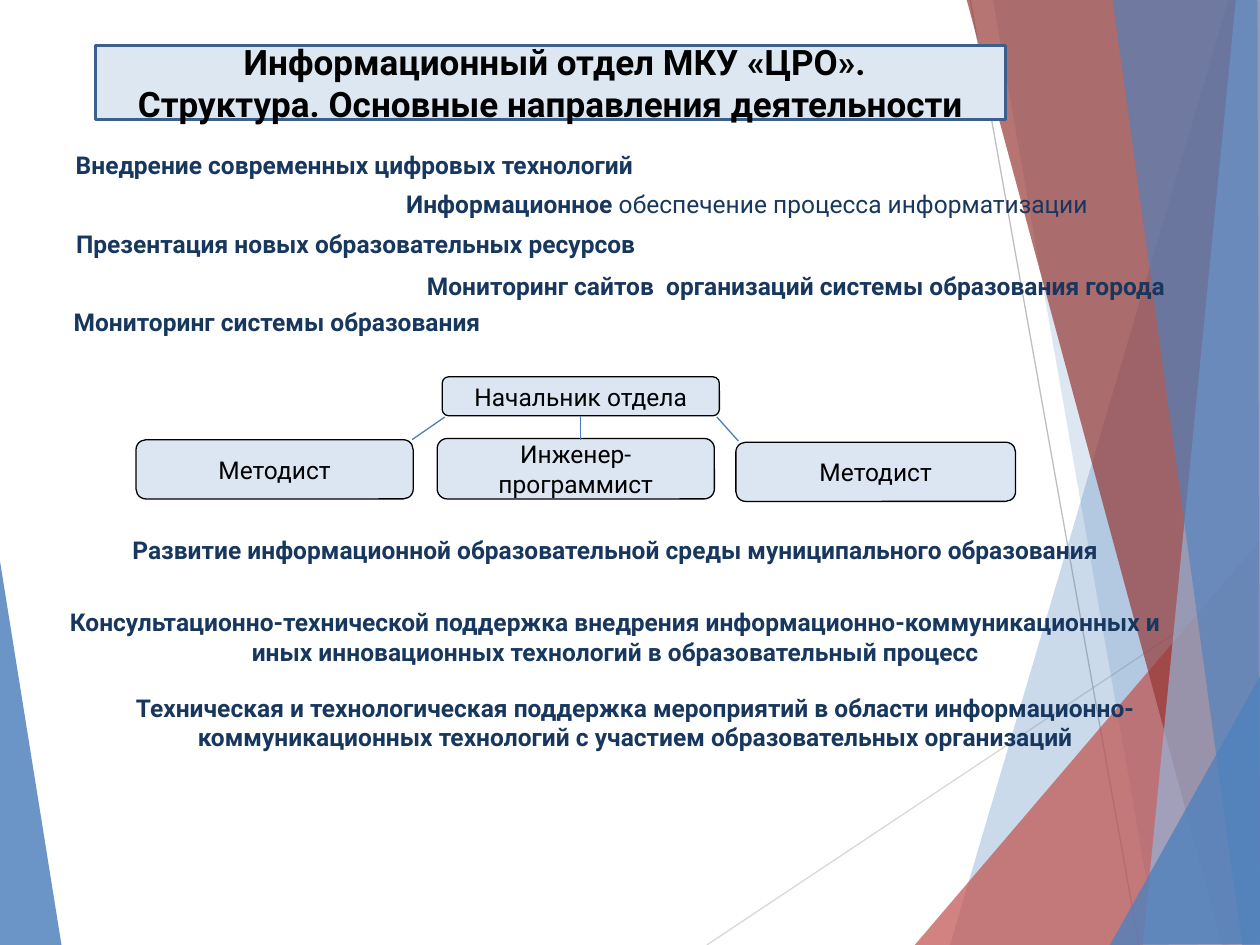
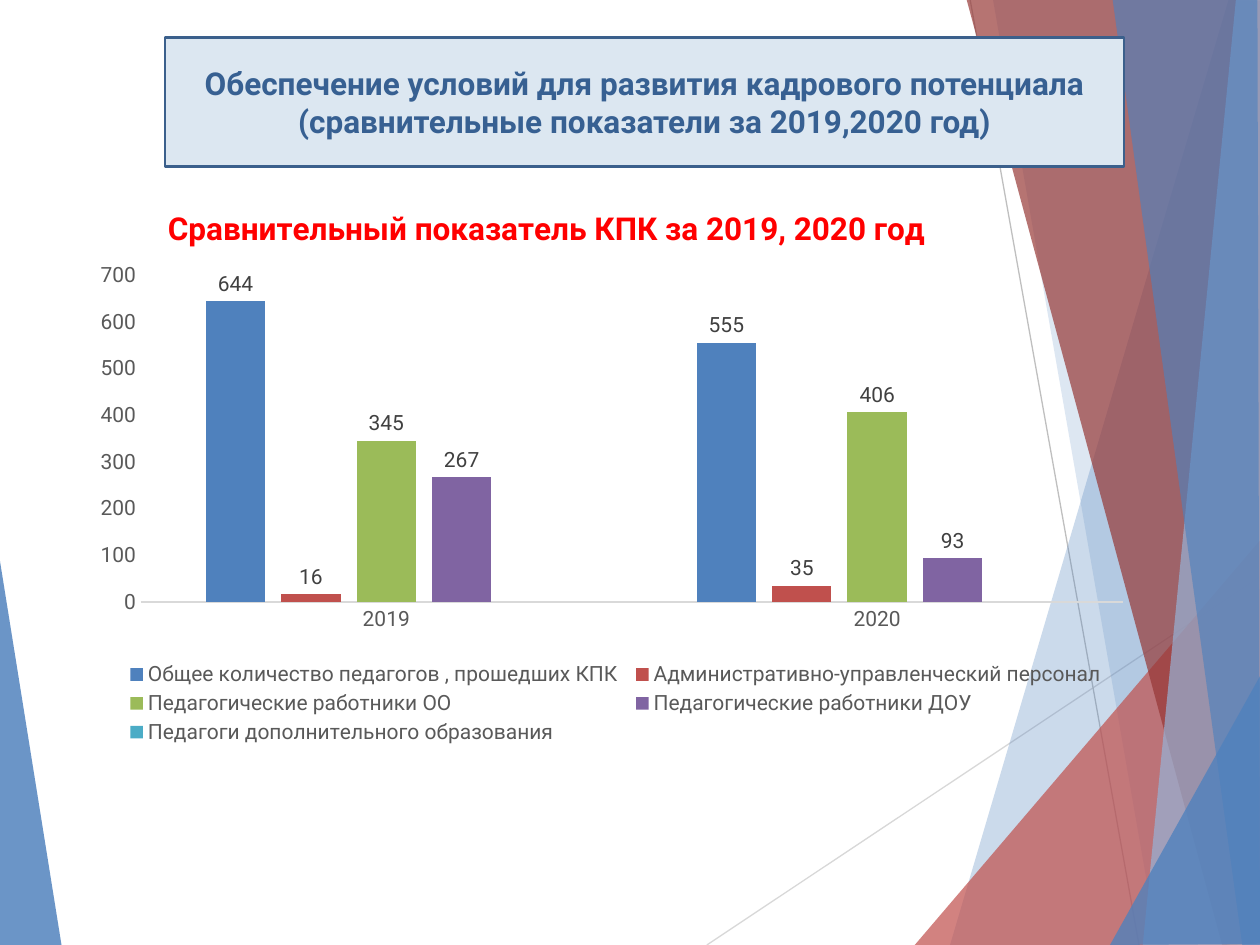
from dataclasses import dataclass
from lxml import etree
from pptx import Presentation
from pptx.chart.data import CategoryChartData
from pptx.dml.color import RGBColor
from pptx.enum.chart import XL_CHART_TYPE as ChartType, XL_LABEL_POSITION as LabelPosition
from pptx.enum.chart import XL_LEGEND_POSITION as LegendPosition, XL_TICK_MARK as TickMark
from pptx.enum.shapes import MSO_CONNECTOR as Connector, MSO_SHAPE as Shape
from pptx.enum.text import MSO_ANCHOR as Anchor, PP_ALIGN as Align
from pptx.oxml import parse_xml
from pptx.oxml.ns import nsdecls, qn
from pptx.util import Inches, Pt


@dataclass(frozen=True)
class Theme:
    font: str = "Roboto"
    blue: str = "4F81BD"
    red: str = "C0504D"
    dark_red: str = "963634"
    pale_blue: str = "96B4D8"
    band: str = "DCE7F1"
    band_line: str = "3B608C"
    box: str = "DCE6F2"
    black: str = "000000"
    text: str = "17375E"
    heading: str = "376092"
    link: str = "4B7EBC"
    chart_title: str = "FF0000"
    axis_text: str = "595959"
    label_text: str = "404040"
    axis_line: str = "D9D9D9"
    title_size: int = 20
    heading_size: int = 18
    body_size: int = 14
    chart_size: int = 12
    thin: float = 0.75
    thick: float = 1.5


THEME = Theme()

FACET_LINES = [((5.61, 7.5), (10.01, 4.57), "D8D8D8"), ((7.7, 0), (9.04, 7.5), "BFBFBF")]
LEFT_FACET = ([(-0.01, 4.39), (0.49, 7.51), (-0.01, 7.5)], THEME.blue, 84)
RIGHT_FACETS = [
    ([(9.75, 0), (7.54, 7.5), (10.02, 7.5), (10.01, 0.01)], THEME.blue, 29),
    ([(7.88, -0.01), (9.19, 7.5), (10.01, 7.5), (10.01, -0.01)], THEME.blue, 19),
    ([(7.26, 7.5), (10, 4.29), (10.01, 7.5)], THEME.red, 71),
    ([(7.67, -0.01), (9.7, 7.5), (10.01, 7.49), (10.01, -0.01)], THEME.dark_red, 69),
    ([(9.81, -0.01), (9.07, 7.5), (10.01, 7.5), (10, -0.01)], THEME.pale_blue, 69),
    ([(8.83, -0.01), (9.86, 7.5), (10, 7.5), (9.98, -0.01)], THEME.blue, 64),
    ([(8.81, 7.5), (10.01, 5.35), (10.01, 7.49)], THEME.blue, 79),
]

DEPARTMENT_TITLE = [" Информационный отдел МКУ «ЦРО».", "Структура. Основные направления деятельности"]
HEAD = ("Начальник отдела", (3.51, 2.99, 2.2, 0.31))
STAFF = [
    ("Методист", (1.08, 3.49, 2.2, 0.47)),
    ("Методист", (5.84, 3.51, 2.22, 0.47)),
    ("Инженер-программист", (3.47, 3.48, 2.2, 0.48)),
]
SIDE_LINKS = [((3.53, 3.31), (3.27, 3.49)), ((5.69, 3.31), (5.86, 3.5))]
MIDDLE_LINK = ((4.61, 3.3), (4.61, 3.49))
ONE_LINE, TWO_LINES = 0.34, 0.57
DIRECTIONS = [
    ("Внедрение современных цифровых технологий", "", (0.41, 1.14, 4.81, ONE_LINE)),
    ("Презентация новых образовательных ресурсов", "", (0.45, 1.77, 4.75, ONE_LINE)),
    ("Развитие информационной образовательной среды муниципального образования", "",
     (0.84, 4.2, 8.09, ONE_LINE)),
    ("Информационное", " обеспечение процесса информатизации", (3.12, 1.45, 5.62, ONE_LINE)),
    ("Консультационно-технической поддержка внедрения информационно-коммуникационных "
     "и иных инновационных технологий в образовательный процесс", "", (0.45, 4.77, 8.87, TWO_LINES)),
    ("Мониторинг сайтов  организаций системы образования города", "", (3.2, 2.1, 6.24, ONE_LINE)),
    ("Мониторинг системы образования", "", (0.45, 2.39, 3.5, ONE_LINE)),
    ("Техническая и технологическая поддержка мероприятий в области "
     "информационно-коммуникационных технологий с участием образовательных организаций", "",
     (0.61, 5.45, 8.87, TWO_LINES)),
]

STAFF_TITLE = ["Обеспечение условий для развития кадрового потенциала",
               "(сравнительные показатели за 2019,2020 год)"]
CHART_TITLE = "Сравнительный показатель КПК за 2019, 2020 год"
CHART_PLACE = (0.61, 1.47, 8.47, 4.47)
YEARS = ["2019", "2020"]
TRAINED = [
    ("Общее количество педагогов , прошедших КПК", (644, 555), THEME.blue),
    ("Административно-управленческий персонал", (16, 35), THEME.red),
    ("Педагогические работники ОО", (345, 406), "9BBB59"),
    ("Педагогические работники ДОУ", (267, 93), "8064A2"),
    ("Педагоги дополнительного образования", (None, None), "4BACC6"),
]


def inches(values):
    return [Inches(value) for value in values]


def color(code):
    return RGBColor.from_string(code)


def style_font(font, size, code, bold=False):
    font.name = THEME.font
    font.size = Pt(size)
    font.bold = bold
    font.color.rgb = color(code)


def paint(shape, fill, line, width):
    shape.fill.solid()
    shape.fill.fore_color.rgb = color(fill)
    shape.line.color.rgb = color(line)
    shape.line.width = Pt(width)


def write(shape, lines, size, code, bold=False):
    frame = shape.text_frame
    frame.text = "\n".join(lines)
    for para in frame.paragraphs:
        para.alignment = Align.CENTER
        for span in para.runs:
            style_font(span.font, size, code, bold)


def add_line(shapes, start, end, code):
    line = shapes.add_connector(Connector.STRAIGHT, *inches(start + end))
    line.line.color.rgb = color(code)
    line.line.width = Pt(THEME.thin)
    etree.SubElement(line.element.spPr, qn("a:effectLst"))
    return line


def add_facet(shapes, points, code, opacity):
    start, *rest = [tuple(inches(point)) for point in points]
    builder = shapes.build_freeform(*start)
    builder.add_line_segments(rest)
    facet = builder.convert_to_shape()
    facet.shadow.inherit = False
    facet.fill.solid()
    facet.fill.fore_color.rgb = color(code)
    facet.line.fill.background()
    tint = facet.element.spPr.find(".//" + qn("a:srgbClr"))
    etree.SubElement(tint, qn("a:alpha"), val=str(opacity * 1000))


def decorate(layout, page):
    group = page.shapes.add_group_shape()
    add_facet(group.shapes, *LEFT_FACET)
    for start, end, code in FACET_LINES:
        add_line(group.shapes, start, end, code)
    for facet in RIGHT_FACETS:
        add_facet(group.shapes, *facet)
    for number, item in enumerate(group.element.iter(qn("p:cNvPr")), 100):
        item.set("id", str(number))
    layout.shapes.element.insert(2, group.element)


def add_title(page, lines, place, size, code):
    title = page.shapes.title
    title.left, title.top, title.width, title.height = inches(place)
    title.element.spPr.append(parse_xml(
        f'<a:prstGeom {nsdecls("a")} prst="roundRect"><a:avLst/></a:prstGeom>'))
    paint(title, THEME.band, THEME.band_line, THEME.thick)
    title.text_frame.vertical_anchor = Anchor.MIDDLE
    write(title, lines, size, code, True)


def add_post(page, name, place):
    post = page.shapes.add_shape(Shape.ROUNDED_RECTANGLE, *inches(place))
    post.shadow.inherit = False
    paint(post, THEME.box, THEME.black, THEME.thin)
    post.text_frame.vertical_anchor = Anchor.MIDDLE
    write(post, [name], THEME.body_size, THEME.black)
    return post


def add_direction(page, strong, plain, place):
    box = page.shapes.add_textbox(*inches(place))
    box.text_frame.word_wrap = place[3] == TWO_LINES
    write(box, [strong], THEME.body_size, THEME.text, True)
    if plain:
        span = box.text_frame.paragraphs[0].add_run()
        span.text = plain
        style_font(span.font, THEME.body_size, THEME.text)


def build_department(page):
    add_title(page, DEPARTMENT_TITLE, (0.76, 0.36, 7.22, 0.59), THEME.title_size, THEME.black)
    head = add_post(page, *HEAD)
    for name, place in STAFF:
        add_post(page, name, place)
    for start, end in SIDE_LINKS:
        add_line(page.shapes, start, end, THEME.link)
    add_line(page.shapes, *MIDDLE_LINK, THEME.link).begin_connect(head, 2)
    for direction in DIRECTIONS:
        add_direction(page, *direction)


def place_part(part, index, inner=False, **edges):
    for old in part.findall(qn("c:layout")):
        part.remove(old)
    layout = etree.Element(qn("c:layout"))
    manual = etree.SubElement(layout, qn("c:manualLayout"))
    settings = {"layoutTarget": "inner"} if inner else {}
    settings.update(xMode="edge", yMode="edge", **edges)
    for name, value in settings.items():
        etree.SubElement(manual, qn("c:" + name), val=str(value))
    part.insert(index, layout)


def build_chart(page):
    add_title(page, STAFF_TITLE, (1.31, 0.3, 7.61, 1.02), THEME.heading_size, THEME.heading)
    data = CategoryChartData()
    data.categories = YEARS
    for name, values, _ in TRAINED:
        data.add_series(name, values)
    chart = page.shapes.add_chart(ChartType.COLUMN_CLUSTERED, *inches(CHART_PLACE), data).chart
    style_font(chart.font, 10, THEME.black)

    title = chart.chart_title
    title.text_frame.text = CHART_TITLE
    style_font(title.text_frame.paragraphs[0].runs[0].font, THEME.heading_size, THEME.chart_title, True)

    plot = chart.plots[0]
    plot.gap_width, plot.overlap, plot.vary_by_categories = 219, -27, False
    for series, (_, values, code) in zip(plot.series, TRAINED):
        series.format.fill.solid()
        series.format.fill.fore_color.rgb = color(code)
        if any(values):
            labels = series.data_labels
            labels.show_value = True
            labels.position = LabelPosition.OUTSIDE_END
            style_font(labels.font, THEME.chart_size, THEME.label_text)

    for axis in (chart.category_axis, chart.value_axis):
        axis.major_tick_mark = axis.minor_tick_mark = TickMark.NONE
        axis.has_major_gridlines = False
        style_font(axis.tick_labels.font, THEME.chart_size, THEME.axis_text)
    chart.category_axis.format.line.color.rgb = color(THEME.axis_line)
    chart.category_axis.format.line.width = Pt(THEME.thin)
    chart.value_axis.format.line.fill.background()
    chart.value_axis.minimum_scale, chart.value_axis.maximum_scale = 0, 700
    chart.value_axis.major_unit = 100

    chart.has_legend = True
    chart.legend.position = LegendPosition.BOTTOM
    chart.legend.include_in_layout = False
    style_font(chart.legend.font, THEME.chart_size, THEME.axis_text)

    root = chart.element
    place_part(root.find(".//" + qn("c:title")), 1, x=0.08, y=0.03)
    place_part(root.find(".//" + qn("c:plotArea")), 0, True, x=0.06, y=0.16, w=0.92, h=0.58)
    place_part(root.find(".//" + qn("c:legend")), 1, x=0.04, y=0.84, w=0.93, h=0.16)


def main():
    deck = Presentation()
    deck.slide_width, deck.slide_height = inches((10, 7.5))
    layout = deck.slide_layouts[5]
    department, chart = [deck.slides.add_slide(layout) for _ in range(2)]
    decorate(layout, department)
    build_department(department)
    build_chart(chart)
    deck.save("out.pptx")


if __name__ == "__main__":
    main()
